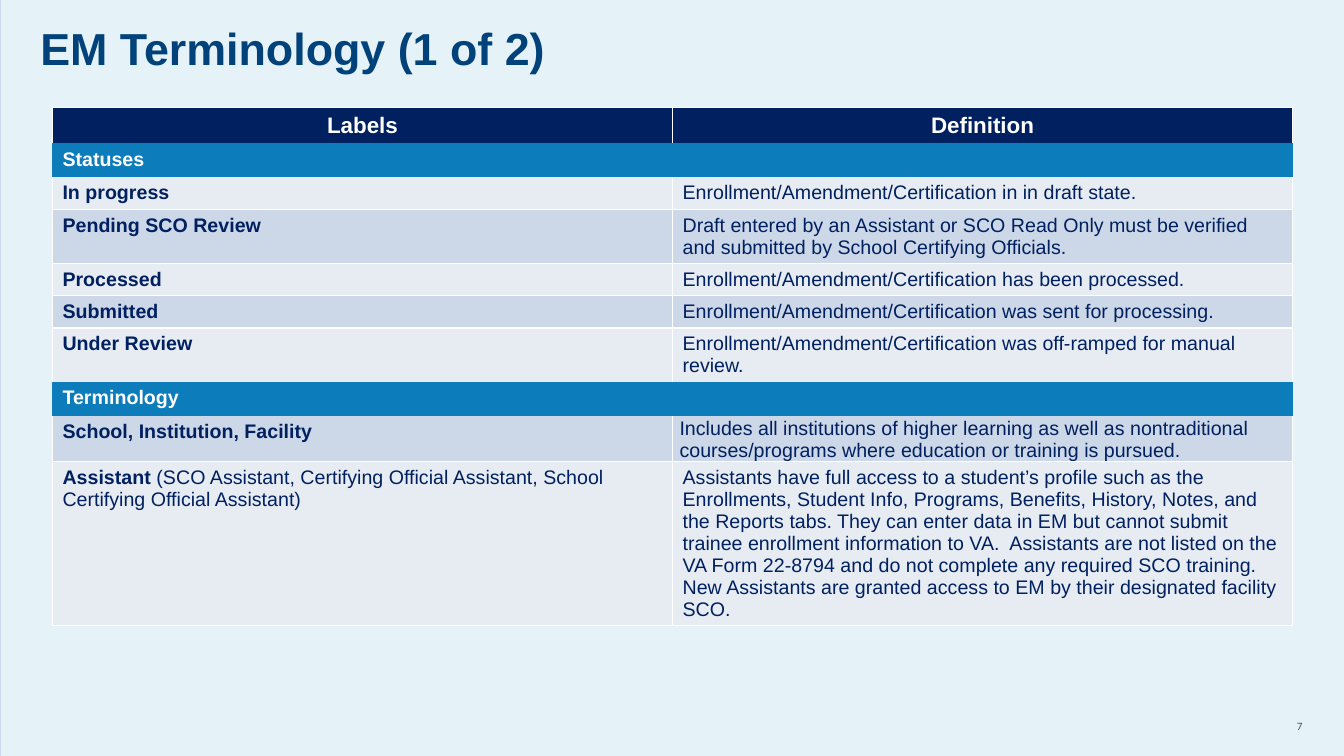
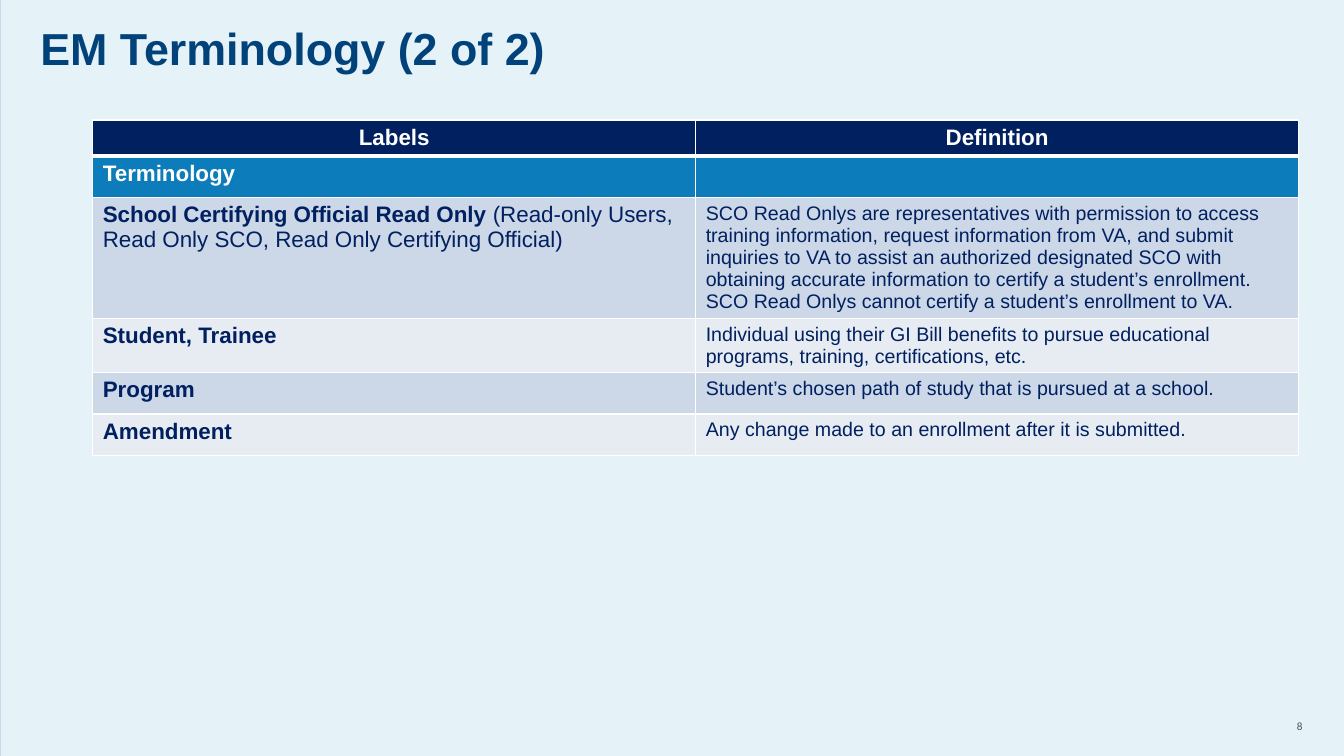
"""Build two slides of enrollment terminology tables."""
from lxml import etree
from pptx import Presentation
from pptx.dml.color import RGBColor
from pptx.enum import shapes, text
from pptx.oxml import ns
from pptx.util import Inches, Pt

NAVY, BLUE, TITLE_BLUE, WHITE = "002060", "0C7CBB", "004279", "FFFFFF"
PALE, TINT, PAGE, EDGE, GREY = "E7ECF3", "CCD7E7", "E5F2F7", "C7D7EB", "4D525C"
LEFT, CENTER, RIGHT = text.PP_ALIGN.LEFT, text.PP_ALIGN.CENTER, text.PP_ALIGN.RIGHT
TOP, MIDDLE = text.MSO_ANCHOR.TOP, text.MSO_ANCHOR.MIDDLE
SNUG_LABEL = "School, Institution, Facility"

pages = [
    dict(
        title="EM Terminology (1 of 2)", number="7", left=0.52, top=1.07, column=6.15,
        label_size=14, open_bands=True,
        heights=[0.35, 0.32, 0.32, 0.53, 0.32, 0.32, 0.53, 0.32, 0.45, 1.62],
        rows=[
            ("Labels", "", "Definition"),
            ("Statuses", "", ""),
            ("In progress", "", "Enrollment/Amendment/Certification in in draft state."),
            ("Pending SCO Review", "", "Draft entered by an Assistant or SCO Read Only must be "
             "verified and submitted by School Certifying Officials."),
            ("Processed", "", "Enrollment/Amendment/Certification has been processed."),
            ("Submitted", "", "Enrollment/Amendment/Certification was sent for processing."),
            ("Under Review", "",
             "Enrollment/Amendment/Certification was off-ramped for manual review."),
            ("Terminology", "", ""),
            (SNUG_LABEL, "", "Includes all institutions of higher learning as well as "
             "nontraditional courses/programs where education or training is pursued."),
            ("Assistant ", "(SCO Assistant, Certifying Official Assistant, School Certifying "
             "Official Assistant)",
             "Assistants have full access to a student’s profile such as the Enrollments, "
             "Student Info, Programs, Benefits, History, Notes, and the Reports tabs. They can "
             "enter data in EM but cannot submit trainee enrollment information to VA.  "
             "Assistants are not listed on the VA Form 22-8794 and do not complete any required "
             "SCO training. New Assistants are granted access to EM by their designated "
             "facility SCO."),
        ],
    ),
    dict(
        title="EM Terminology (2 of 2)", number="8", left=0.92, top=1.19, column=5.98,
        label_size=16, open_bands=False,
        heights=[0.36, 0.41, 1.2, 0.53, 0.41, 0.41],
        rows=[
            ("Labels", "", "Definition"),
            ("Terminology", "", ""),
            ("School Certifying Official Read Only ",
             "(Read-only Users, Read Only SCO, Read Only Certifying Official)",
             "SCO Read Onlys are representatives with permission to access training "
             "information, request information from VA, and submit inquiries to VA to assist an "
             "authorized designated SCO with obtaining accurate information to certify a "
             "student’s enrollment. SCO Read Onlys cannot certify a student’s enrollment to VA."),
            ("Student, Trainee", "", "Individual using their GI Bill benefits to pursue "
             "educational programs, training, certifications, etc."),
            ("Program", "", "Student’s chosen path of study that is pursued at a school."),
            ("Amendment", "", "Any change made to an enrollment after it is submitted."),
        ],
    ),
]


def write(frame, words, size, color, bold=False, note="", font="Arial", align=LEFT, spacing=None):
    paragraph = frame.paragraphs[0]
    paragraph.alignment = align
    if spacing:
        paragraph.line_spacing = spacing
    for part, heavy in ((words, bold), (note, False)):
        if part:
            run = paragraph.add_run()
            run.text = part
            run.font.name, run.font.size, run.font.bold = font, Pt(size), heavy
            run.font.color.rgb = RGBColor.from_string(color)
    if not words:
        etree.SubElement(paragraph._p, ns.qn("a:endParaRPr"), sz=str(size * 100))


def style_cell(cell, fill, borders):
    properties = cell._tc.get_or_add_tcPr()
    for side, width in borders.items():
        line = etree.SubElement(properties, ns.qn(f"a:ln{side}"), w=str(Pt(width)))
        if width:
            solid = etree.SubElement(line, ns.qn("a:solidFill"))
            etree.SubElement(solid, ns.qn("a:srgbClr"), val=WHITE)
        else:
            etree.SubElement(line, ns.qn("a:noFill"))
    cell.fill.solid()
    cell.fill.fore_color.rgb = RGBColor.from_string(fill)


prs = Presentation()
prs.slide_width, prs.slide_height = Inches(13.33), Inches(7.5)
backdrop = prs.slide_master.background.fill
backdrop.solid()
backdrop.fore_color.rgb = RGBColor.from_string(EDGE)
layout = prs.slide_layouts[5]

for page in pages:
    slide = prs.slides.add_slide(layout)
    panel = slide.shapes.add_shape(
        shapes.MSO_SHAPE.RECTANGLE, Inches(0.01), 0, Inches(13.32), Inches(7.5))
    panel.shadow.inherit = False
    panel.fill.solid()
    panel.fill.fore_color.rgb = RGBColor.from_string(PAGE)
    panel.line.fill.background()
    slide.shapes.element.insert(2, panel.element)

    title = slide.shapes.title
    title.left, title.top, title.width, title.height = map(Inches, (0.4, 0.31, 12.5, 0.63))
    number = slide.shapes.add_textbox(*map(Inches, (12.5, 7.09, 0.42, 0.23)))
    for frame, anchor in ((title.text_frame, TOP), (number.text_frame, MIDDLE)):
        frame.margin_left = frame.margin_top = frame.margin_right = frame.margin_bottom = 0
        frame.auto_size = text.MSO_AUTO_SIZE.NONE
        frame.word_wrap = True
        frame.vertical_anchor = anchor
    write(title.text_frame, page["title"], 32, TITLE_BLUE, bold=True, spacing=0.8)
    write(number.text_frame, page["number"], 8, GREY, font="Calibri", align=RIGHT)

    rows, heights = page["rows"], page["heights"]
    glossary = slide.shapes.add_table(
        len(rows), 2, Inches(page["left"]), Inches(page["top"]),
        Inches(2 * page["column"]), Inches(sum(heights))).table
    for column in glossary.columns:
        column.width = Inches(page["column"])

    bands = [not definition for _, _, definition in rows]
    open_rows = [band and page["open_bands"] for band in bands]
    rules = [1] * (len(rows) + 1)
    if not page["open_bands"]:
        rules[1] = 3
    for index, is_open in enumerate(open_rows):
        if is_open:
            rules[index] = rules[index + 1] = 0

    for index, (label, note, definition) in enumerate(rows):
        glossary.rows[index].height = Inches(heights[index])
        label_cell, definition_cell = glossary.cell(index, 0), glossary.cell(index, 1)
        side = 0 if open_rows[index] else 1
        entries_below = bands[index + 1:].count(False)
        if index == 0:
            fill = NAVY
        elif bands[index]:
            fill = BLUE
        else:
            fill = TINT if entries_below % 2 else PALE
        for cell in (label_cell, definition_cell):
            style_cell(cell, fill, dict(L=side, R=side, T=rules[index], B=rules[index + 1]))

        if index == 0:
            for cell, heading in ((label_cell, label), (definition_cell, definition)):
                write(cell.text_frame, heading, 16, WHITE, bold=True, align=CENTER)
            continue
        write(label_cell.text_frame, label, page["label_size"],
              WHITE if bands[index] else NAVY, bold=True, note=note)
        write(definition_cell.text_frame, definition, 14, NAVY)
        if label == SNUG_LABEL:
            definition_cell.vertical_anchor = MIDDLE
            definition_cell.margin_left = definition_cell.margin_right = Inches(0.07)
            definition_cell.margin_top, definition_cell.margin_bottom = Inches(0.01), 0

prs.save("out.pptx")
